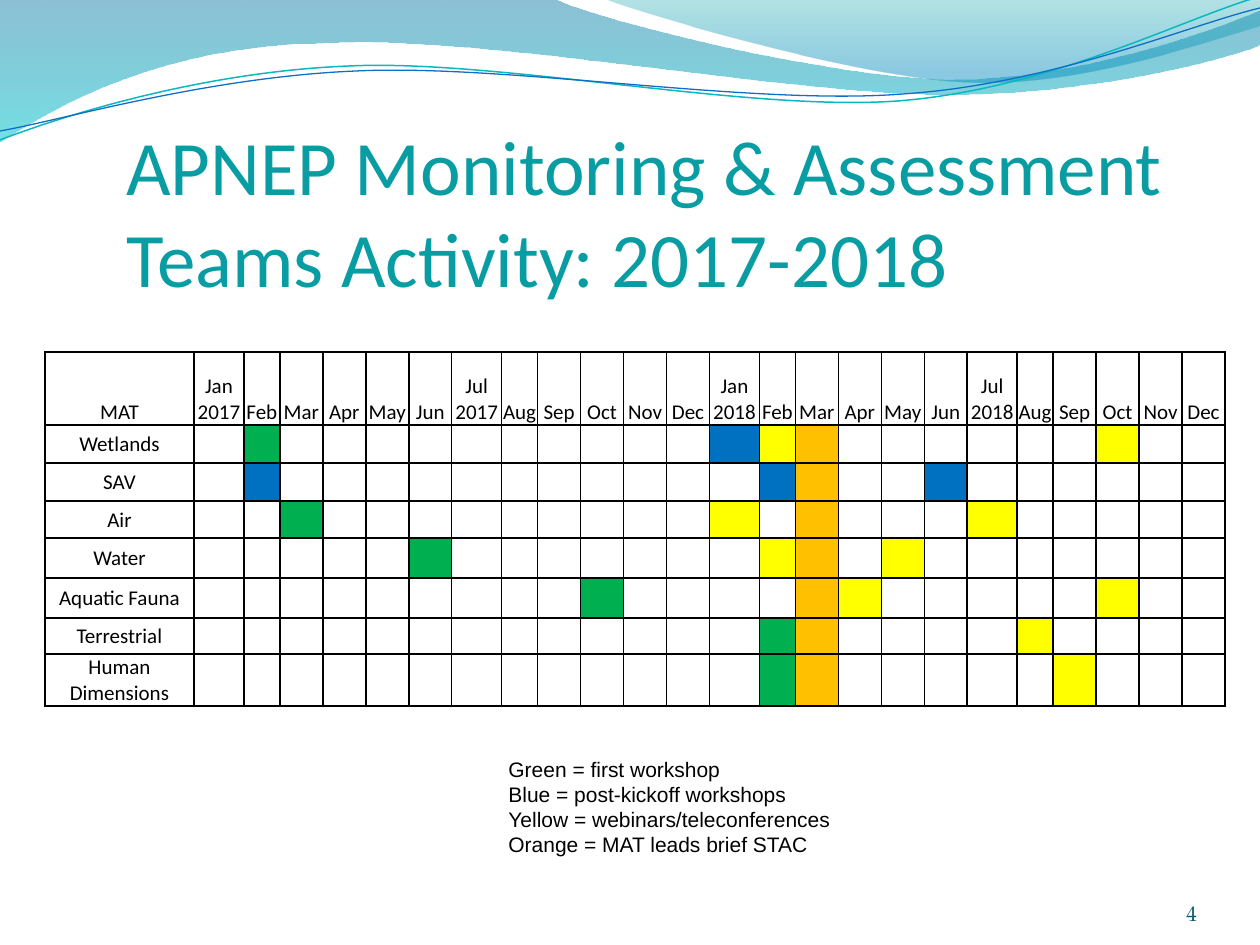
import dataclasses
import math

import pptx
import pptx.dml.color
import pptx.enum.text
import pptx.oxml
import pptx.oxml.ns
import pptx.util
from lxml import etree

EMU_PER_PX = 914400 / 126
Point = tuple[float, float]
Box = tuple[int, int, int, int]
ALIGN = pptx.enum.text.PP_ALIGN
ANCHOR = pptx.enum.text.MSO_ANCHOR
AUTO_SIZE = pptx.enum.text.MSO_AUTO_SIZE
qn = pptx.oxml.ns.qn


@dataclasses.dataclass(frozen=True)
class Theme:
    black: str = "000000"
    title: str = "089CA3"
    number: str = "045D75"
    first_workshop: str = "00B050"
    later_workshop: str = "0070C0"
    webinar: str = "FFFF00"
    briefing: str = "FFC000"
    body_font: str = "Calibri"
    legend_font: str = "Arial"
    number_font: str = "TeX Gyre Pagella"
    title_size: int = 44
    text_size: int = 12


THEME = Theme()


@dataclasses.dataclass(frozen=True)
class GradientStop:
    position: int
    color: str
    opacity: int


@dataclasses.dataclass(frozen=True)
class Wave:
    """Each step holds one point (straight) or three (Bézier), as seen on the slide."""
    box: Box
    start: Point
    steps: list[tuple[Point, ...]]
    stops: tuple[GradientStop, ...] = ()
    line_color: str = ""
    line_width: float = 0
    rotation: float = 0


@dataclasses.dataclass(frozen=True)
class Team:
    name: str
    row_height: int
    first_workshop: int  # months count from 1 = January 2017
    later_workshops: tuple[int, ...] = ()
    webinars: tuple[int, ...] = ()


@dataclasses.dataclass(frozen=True)
class TextBlock:
    box: Box
    lines: list[str]
    font: str
    size: int
    color: str
    align: ALIGN = ALIGN.LEFT
    anchor: ANCHOR = ANCHOR.TOP
    wrap: bool = True
    grow: bool = True
    inset: bool = True


WAVES = [
    Wave((-1, -1, 1262, 143), (0, 0), [
        ((554, -1),), ((600, 21), (837, 79), (955, 79)), ((1075, 79), (1207, 33), (1260, 11)),
        ((1261, 45),), ((1239, 55), (1096, 96), (940, 94)), ((784, 94), (481, 35), (324, 43)),
        ((163, 45), (58, 105), (-1, 142)), ((0, 0),),
    ], stops=(GradientStop(0, "0074A1", 45), GradientStop(100, "00C6CF", 55))),
    Wave((604, -1, 656, 88), (604, -1), [
        ((641, 14), (859, 78), (969, 82)), ((1079, 87), (1211, 40), (1260, 26)),
        ((1260, 0),), ((604, -1),),
    ], stops=(GradientStop(0, "00A1A9", 30), GradientStop(80, "008BBF", 45))),
    Wave((-2, 28, 1262, 89), (0, 140), [
        ((60, 117), (199, 72), (349, 66)), ((498, 59), (747, 112), (898, 101)),
        ((1050, 89), (1182, 19), (1258, -3)),
    ], line_color="0AB8BF", line_width=0.85, rotation=357.3),
    Wave((-2, 38, 1264, 73), (0, 131), [
        ((59, 121), (207, 77), (357, 71)), ((508, 64), (752, 106), (903, 94)),
        ((1053, 84), (1186, 26), (1260, 8)),
    ], line_color="0F6FC6", line_width=0.75, rotation=357.3),
]

MONTHS = "Jan Feb Mar Apr May Jun Jul Aug Sep Oct Nov Dec".split()
HALF_YEAR_WIDTHS = [50, 36, 43, 43, 43, 43]
BRIEFING_MONTH = 15
TEAMS = [
    Team("Wetlands", 38, 2, (13,), (14, 22)),
    Team("SAV", 38, 0, (2, 14, 18)),
    Team("Air", 37, 3, (), (13, 19)),
    Team("Water", 40, 6, (), (14, 17)),
    Team("Aquatic Fauna", 40, 10, (), (16, 22)),
    Team("Terrestrial", 36, 14, (), (20,)),
    Team("Human Dimensions", 38, 14, (), (21,)),
]

TEXTS = [
    TextBlock((114, 112, 1081, 199), ["APNEP Monitoring & Assessment Teams Activity: 2017-2018"],
              THEME.body_font, THEME.title_size, THEME.title),
    TextBlock((496, 750, 349, 115), [
        "Green = first workshop", "Blue = post-kickoff workshops",
        "Yellow = webinars/teleconferences", "Orange = MAT leads brief STAC",
    ], THEME.legend_font, THEME.text_size, THEME.black, wrap=False),
    TextBlock((1092, 876, 105, 50), ["4"], THEME.number_font, THEME.text_size, THEME.number,
              ALIGN.RIGHT, ANCHOR.BOTTOM, grow=False, inset=False),
]


def px(value: float) -> int:
    return pptx.util.Emu(round(value * EMU_PER_PX))


def rgb(color: str) -> pptx.dml.color.RGBColor:
    return pptx.dml.color.RGBColor.from_string(color)


def style_paragraph(paragraph, font: str, size: int, color: str, align: ALIGN) -> None:
    paragraph.alignment = align
    paragraph.font.name = font
    paragraph.font.size = pptx.util.Pt(size)
    paragraph.font.color.rgb = rgb(color)


def to_local(point: Point, wave: Wave) -> Point:
    """Turn a slide point back by the rotation and measure it from the box corner."""
    left, top, width, height = wave.box
    angle = math.radians(-wave.rotation)
    dx, dy = point[0] - left - width / 2, point[1] - top - height / 2
    return (dx * math.cos(angle) - dy * math.sin(angle) + width / 2,
            dx * math.sin(angle) + dy * math.cos(angle) + height / 2)


def write_curves(shape, wave: Wave) -> None:
    outline = next(shape._element.iter(qn("a:path")))
    for child in list(outline):
        outline.remove(child)
    outline.set("w", str(px(wave.box[2])))
    outline.set("h", str(px(wave.box[3])))
    for index, points in enumerate([(wave.start,)] + wave.steps):
        tag = "a:moveTo" if index == 0 else "a:lnTo" if len(points) == 1 else "a:cubicBezTo"
        step = etree.SubElement(outline, qn(tag))
        for point in points:
            x, y = to_local(point, wave)
            etree.SubElement(step, qn("a:pt"), x=str(px(x)), y=str(px(y)))
    if wave.stops:
        etree.SubElement(outline, qn("a:close"))


def draw_wave(slide, wave: Wave) -> None:
    builder = slide.shapes.build_freeform(*wave.start, scale=EMU_PER_PX)
    builder.add_line_segments([step[-1] for step in wave.steps], close=False)
    shape = builder.convert_to_shape()
    shape.left, shape.top, shape.width, shape.height = map(px, wave.box)
    shape.rotation = wave.rotation
    shape.shadow.inherit = False
    write_curves(shape, wave)
    if not wave.stops:
        shape.fill.background()
        shape.line.color.rgb = rgb(wave.line_color)
        shape.line.width = pptx.util.Pt(wave.line_width)
        return
    shape.line.fill.background()
    shape.fill.gradient()
    shape.fill.gradient_angle = 270
    elements = shape._element.iter(qn("a:gs"))
    for stop, target, element in zip(wave.stops, shape.fill.gradient_stops, elements):
        target.color.rgb = rgb(stop.color)
        element.set("pos", str(stop.position * 1000))
        etree.SubElement(element[0], qn("a:alpha"), val=str(stop.opacity * 1000))


def fill_cell(cell, text: str, color: str, anchor: ANCHOR) -> None:
    cell.margin_left = cell.margin_right = cell.margin_top = px(1)
    cell.margin_bottom = 0
    cell.vertical_anchor = anchor
    cell.text = text
    style_paragraph(cell.text_frame.paragraphs[0], THEME.body_font, THEME.text_size,
                    THEME.black, ALIGN.CENTER)
    properties = cell._tc.get_or_add_tcPr()
    for side in ("lnL", "lnR", "lnT", "lnB"):
        properties.append(pptx.oxml.parse_xml(
            f'<a:{side} {pptx.oxml.ns.nsdecls("a")} w="12700"><a:solidFill>'
            f'<a:srgbClr val="{THEME.black}"/></a:solidFill></a:{side}>'))
    if color:
        cell.fill.solid()
        cell.fill.fore_color.rgb = rgb(color)
    else:
        cell.fill.background()


def draw_schedule(slide) -> None:
    widths = [149] + HALF_YEAR_WIDTHS * 4
    heights = [73] + [team.row_height for team in TEAMS]
    table = slide.shapes.add_table(len(heights), len(widths), px(45), px(352),
                                   px(sum(widths)), px(sum(heights))).table
    table.first_row = table.horz_banding = False
    for column, width in zip(table.columns, widths):
        column.width = px(width)
    for row, height in zip(table.rows, heights):
        row.height = px(height)
    # Header: the year stands under January and July
    labels = ["MAT"] + [f"{month} {year}" if month in ("Jan", "Jul") else month
                        for year in (2017, 2018) for month in MONTHS]
    for index, label in enumerate(labels):
        fill_cell(table.cell(0, index), label, "", ANCHOR.BOTTOM)
    # One row per team, coloured by kind of meeting
    for row_index, team in enumerate(TEAMS, start=1):
        colors = {month: THEME.webinar for month in team.webinars}
        colors |= {month: THEME.later_workshop for month in team.later_workshops}
        colors |= {team.first_workshop: THEME.first_workshop, BRIEFING_MONTH: THEME.briefing}
        fill_cell(table.cell(row_index, 0), team.name, "", ANCHOR.MIDDLE)
        for month in range(1, len(widths)):
            fill_cell(table.cell(row_index, month), "", colors.get(month, ""), ANCHOR.MIDDLE)


def draw_text(slide, block: TextBlock) -> None:
    frame = slide.shapes.add_textbox(*map(px, block.box)).text_frame
    frame.word_wrap = block.wrap
    frame.auto_size = AUTO_SIZE.SHAPE_TO_FIT_TEXT if block.grow else AUTO_SIZE.NONE
    frame.vertical_anchor = block.anchor
    if not block.inset:
        frame.margin_left = frame.margin_right = frame.margin_top = frame.margin_bottom = 0
    frame.text = "\n".join(block.lines)
    for paragraph in frame.paragraphs:
        style_paragraph(paragraph, block.font, block.size, block.color, block.align)


def main() -> None:
    presentation = pptx.Presentation()
    presentation.slide_width, presentation.slide_height = px(1260), px(945)
    slide = presentation.slides.add_slide(presentation.slide_layouts[6])
    for wave in WAVES:
        draw_wave(slide, wave)
    draw_schedule(slide)
    for block in TEXTS:
        draw_text(slide, block)
    presentation.save("out.pptx")


if __name__ == "__main__":
    main()
